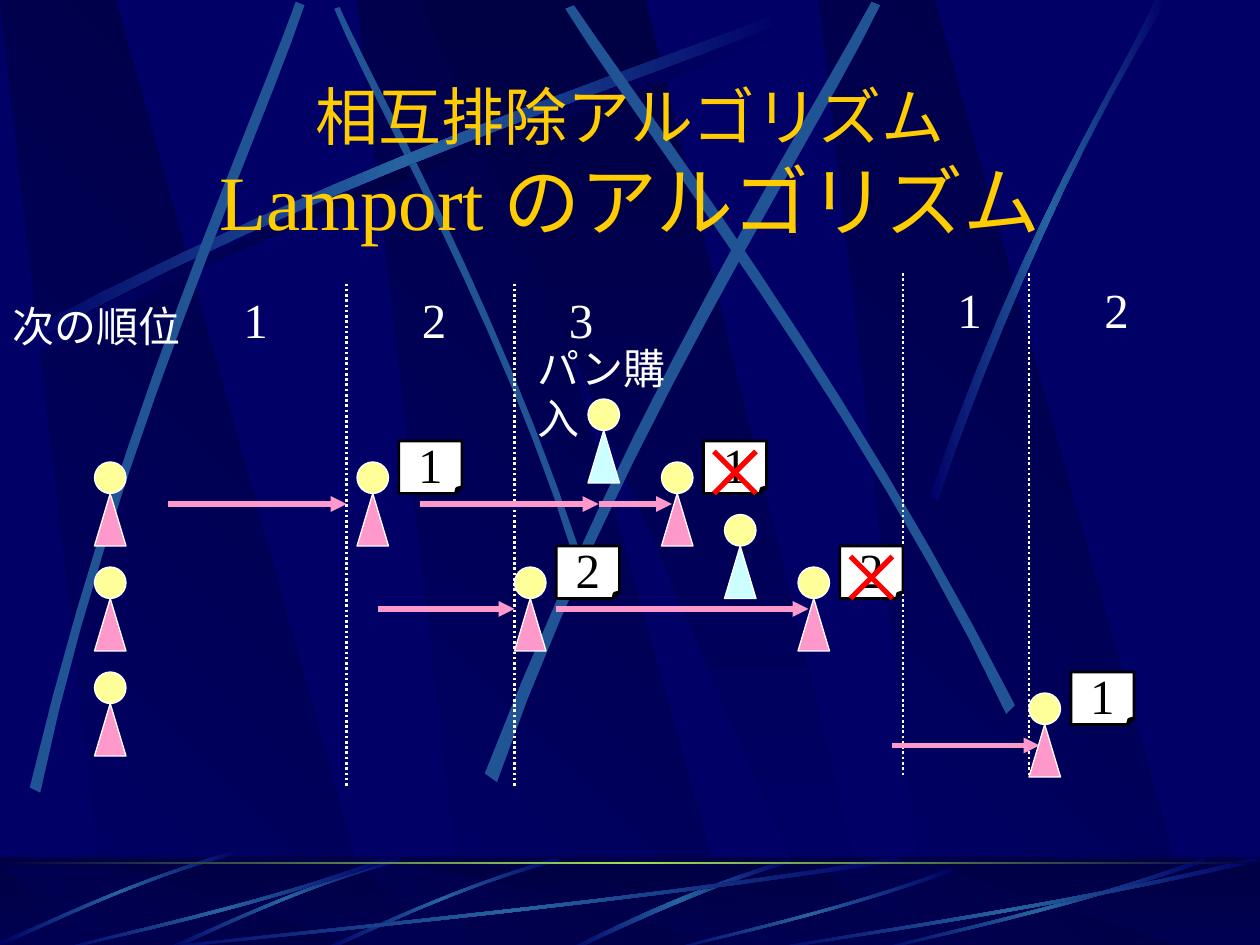
"""Build a slide on Lamport's mutual exclusion algorithm."""
from lxml import etree
from pptx import Presentation
from pptx.dml.color import RGBColor
from pptx.enum.dml import MSO_LINE
from pptx.enum.shapes import MSO_CONNECTOR, MSO_SHAPE
from pptx.enum.text import MSO_ANCHOR, PP_ALIGN
from pptx.oxml.ns import qn
from pptx.util import Pt

RECT, OVAL = MSO_SHAPE.RECTANGLE, MSO_SHAPE.OVAL
CONE, NOTE = MSO_SHAPE.FLOWCHART_EXTRACT, MSO_SHAPE.FOLDED_CORNER
STRAIGHT, DOTS = MSO_CONNECTOR.STRAIGHT, MSO_LINE.ROUND_DOT
LEFT, MID, CENTER = PP_ALIGN.LEFT, MSO_ANCHOR.MIDDLE, PP_ALIGN.CENTER
NAVY, DARK = RGBColor(0, 0, 0x66), RGBColor(0, 0, 0x44)
BLUE, STEEL = RGBColor(0x26, 0x63, 0xA0), RGBColor(0x20, 0x54, 0x94)
LIME, GOLD = RGBColor(0x9C, 0xE1, 0x57), RGBColor(0xFF, 0xCC, 0)
WHITE, BLACK = RGBColor(0xFF, 0xFF, 0xFF), RGBColor(0, 0, 0)
CREAM, PINK = RGBColor(0xFF, 0xFF, 0x99), RGBColor(0xFF, 0x99, 0xCC)
AQUA, RED = RGBColor(0xCC, 0xFF, 0xFF), RGBColor(0xFF, 0, 0)
SERIF, SANS = "Times New Roman", "Montserrat"

deck = Presentation()
deck.slide_width, deck.slide_height = Pt(720), Pt(540)
slide = deck.slides.add_slide(deck.slide_layouts[6])
slide.background.fill.solid()
slide.background.fill.fore_color.rgb = NAVY
shapes = slide.shapes


def paint(shape, *tones, turn=0, edge=None, width=0.75):
    shape.shadow.inherit = False
    if edge is None:
        shape.line.fill.background()
    else:
        shape.line.color.rgb = edge
        shape.line.width = Pt(width)
    if len(tones) == 1:
        shape.fill.solid()
        shape.fill.fore_color.rgb = tones[0]
        return
    shape.fill.gradient()
    shape.fill.gradient_angle = -turn % 360
    stops = shape._element.spPr.find(".//" + qn("a:gsLst"))
    stops.clear()
    for i, tone in enumerate(tones):
        stop = etree.SubElement(stops, qn("a:gs"), pos=str(100000 * i // (len(tones) - 1)))
        etree.SubElement(stop, qn("a:srgbClr"), val=str(tone))


def rule(x1, y1, x2, y2, tone, width, dash=None, head=False):
    line = shapes.add_connector(STRAIGHT, Pt(x1), Pt(y1), Pt(x2), Pt(y2))
    line.line.color.rgb = tone
    line.line.width = Pt(width)
    if dash:
        line.line.dash_style = dash
    if head:
        etree.SubElement(line._element.spPr.find(qn("a:ln")), qn("a:tailEnd"), type="triangle")
    etree.SubElement(line._element.spPr, qn("a:effectLst"))


fade, dim, flat = (NAVY, BLUE, NAVY), (NAVY, DARK, NAVY), (STEEL,)
sweep = [(10, 192), (200, 90), (373, 37), (446, 7), (449, 12), (376, 44), (179, 103), (12, 199)]
high = [
    (dim, [(x + 4, y + 6) for x, y in sweep]),
    (flat, [(331, 314), (282, 168), (217, 55), (194, 4),
            (191, 5), (212, 57), (287, 186), (327, 316)]),
    (fade, sweep),
    (flat, [(17, 450), (67, 240), (142, 76), (169, 1),
            (174, 3), (149, 78), (62, 265), (23, 453)]),
    (flat, [(277, 442), (359, 230), (459, 73), (498, 1),
            (503, 3), (467, 78), (350, 256), (284, 447)]),
    (flat, [(580, 403), (482, 211), (372, 68), (328, 3),
            (323, 5), (365, 73), (493, 234), (575, 408)]),
    (fade, [(531, 284), (586, 125), (639, 48), (660, 0),
            (667, 0), (602, 104), (554, 232), (536, 286)]),
]
low = [(fade, [(451, 491), (387, 510), (343, 534), (323, 543),
               (326, 544), (353, 531), (411, 504), (452, 493)])]
short = [(318, 490), (256, 508), (207, 533), (184, 542),
         (185, 544), (207, 535), (263, 506), (320, 492)]
for dx, dy in ((0, 0), (-90, 0), (-184, -4)):
    low.append((fade, [(x + dx, y + dy) for x, y in short]))
arc = [(1, 0.04), (0.57, 0.57), (0.17, 0.85), (0.01, 1),
       (0, 0.99), (0.17, 0.81), (0.62, 0.5), (0.99, 0)]
for x, y, wide in ((72, 490, 444), (30, 490, 192), (379, 496, 166), (498, 490, 192), (432, 490, 288)):
    low.append((fade, [(x + wide * u, y + (544 - y) * v) for u, v in arc]))

beams = [
    ((266, 421, 269, 204), (NAVY, DARK), 315),
    ((62, 217, 66, 0), (NAVY, DARK), 315),
    ((530, 685, 534, 468), (NAVY, DARK), 315),
    ((474, 500, 369, 240), (DARK, NAVY), 90),
]
floor = (0, Pt(490), Pt(720), Pt(54))
for top, base, rays in ((0, 541, high), (495, 544, low)):
    if top:
        paint(shapes.add_shape(RECT, *floor), DARK, NAVY, turn=90)
    plan = [(list(zip(xs, (base, base, top, top))), tones, turn) for xs, tones, turn in beams]
    for tones, ray in rays:
        dots = []
        for a, b, c, d in (ray[:4], ray[4:]):
            for t in (i / 12 for i in range(13)):
                s = 1 - t
                dots.append(tuple(s**3 * p + 3 * s * s * t * q + 3 * s * t * t * r + t**3 * e
                                  for p, q, r, e in zip(a, b, c, d)))
        plan.append((dots, tones, 0))
    for i, (dots, tones, turn) in enumerate(plan):
        if top and i == len(beams):
            veil = shapes.add_shape(RECT, *floor)
            paint(veil, DARK)
            tint = veil._element.spPr.find(".//" + qn("a:srgbClr"))
            etree.SubElement(tint, qn("a:alpha"), val="50000")
        spots = [(Pt(x), Pt(y)) for x, y in dots]
        form = shapes.build_freeform(*spots[0], scale=1.0)
        form.add_line_segments(spots[1:], close=True)
        paint(form.convert_to_shape(), *tones, turn=turn)
paint(shapes.add_shape(RECT, 0, Pt(492.5), Pt(720), Pt(1.5)), DARK, LIME, DARK)

title = shapes.add_textbox(Pt(54), Pt(41), Pt(612), Pt(103)).text_frame
title.word_wrap, title.vertical_anchor = True, MID
para = title.paragraphs[0]
para.alignment = CENTER
for text, face, size in (("相互排除アルゴリズム", SANS, 36), ("Lamport ", SERIF, 44), ("のアルゴリズム", SANS, 44)):
    run = para.add_run()
    run.text = text
    for key, val in {"name": face, "size": Pt(size)}.items():
        setattr(run.font, key, val)
    run.font.color.rgb = GOLD
    if size == 36:
        para.add_line_break()

for x, y in ((198, 162), (294, 162), (516, 156), (588, 156)):
    rule(x, y, x, y + 288, WHITE, 1.5, dash=DOTS)
for x, end, y in ((96, 198, 288), (216, 294, 348), (240, 342, 288),
                  (342, 384, 288), (318, 462, 348), (510, 594, 426)):
    rule(x, y, end, y, PINK, 3, head=True)

plain = {"size": Pt(24), "name": SERIF}
large = {**plain, "size": Pt(28)}
words = []
for text, x, y, wide, look in (
    ("次の順位", 0, 168, 117, plain), ("パン購入", 300, 192, 107, plain),
    ("1", 132, 162, 29, large), ("2", 234, 162, 29, large), ("3", 318, 162, 29, large),
    ("1", 540, 156, 29, large), ("2", 624, 156, 29, large),
):
    box = shapes.add_textbox(Pt(x), Pt(y), Pt(wide), Pt(36))
    box.text_frame.word_wrap = text == "パン購入"
    words.append((box, text, look, WHITE, LEFT))

cards = [("1", 228, 252, False), ("2", 318, 312, False), ("1", 612, 384, False),
         ("1", 402, 252, True), ("2", 480, 312, True)]
for text, x, y, done in cards:
    card = shapes.add_shape(NOTE, Pt(x), Pt(y), Pt(36), Pt(30))
    folds = card._element.spPr.find(".//" + qn("a:avLst"))
    etree.SubElement(folds, qn("a:gd"), name="adj", fmla="val 12500")
    paint(card, WHITE, edge=BLACK, width=1.5)
    card.text_frame.word_wrap = False
    card.text_frame.vertical_anchor = MID
    words.append((card, text, large, BLACK, CENTER))
    if done:
        rule(x + 30, y + 6, x + 6, y + 30, RED, 3)
        rule(x + 6, y + 6, x + 30, y + 30, RED, 3)

for box, text, look, tone, side in words:
    para = box.text_frame.paragraphs[0]
    para.text, para.alignment = text, side
    for key, val in look.items():
        setattr(para.font, key, val)
    para.font.color.rgb = tone

for x, y, robe in (
    (54, 264, PINK), (54, 324, PINK), (54, 384, PINK), (204, 264, PINK), (294, 324, PINK),
    (336, 228, AQUA), (378, 264, PINK), (414, 294, AQUA), (456, 324, PINK), (588, 396, PINK),
):
    paint(shapes.add_shape(OVAL, Pt(x), Pt(y), Pt(18), Pt(18)), CREAM, edge=WHITE)
    paint(shapes.add_shape(CONE, Pt(x), Pt(y + 18), Pt(18), Pt(30)), robe, edge=WHITE)

deck.save("out.pptx")
